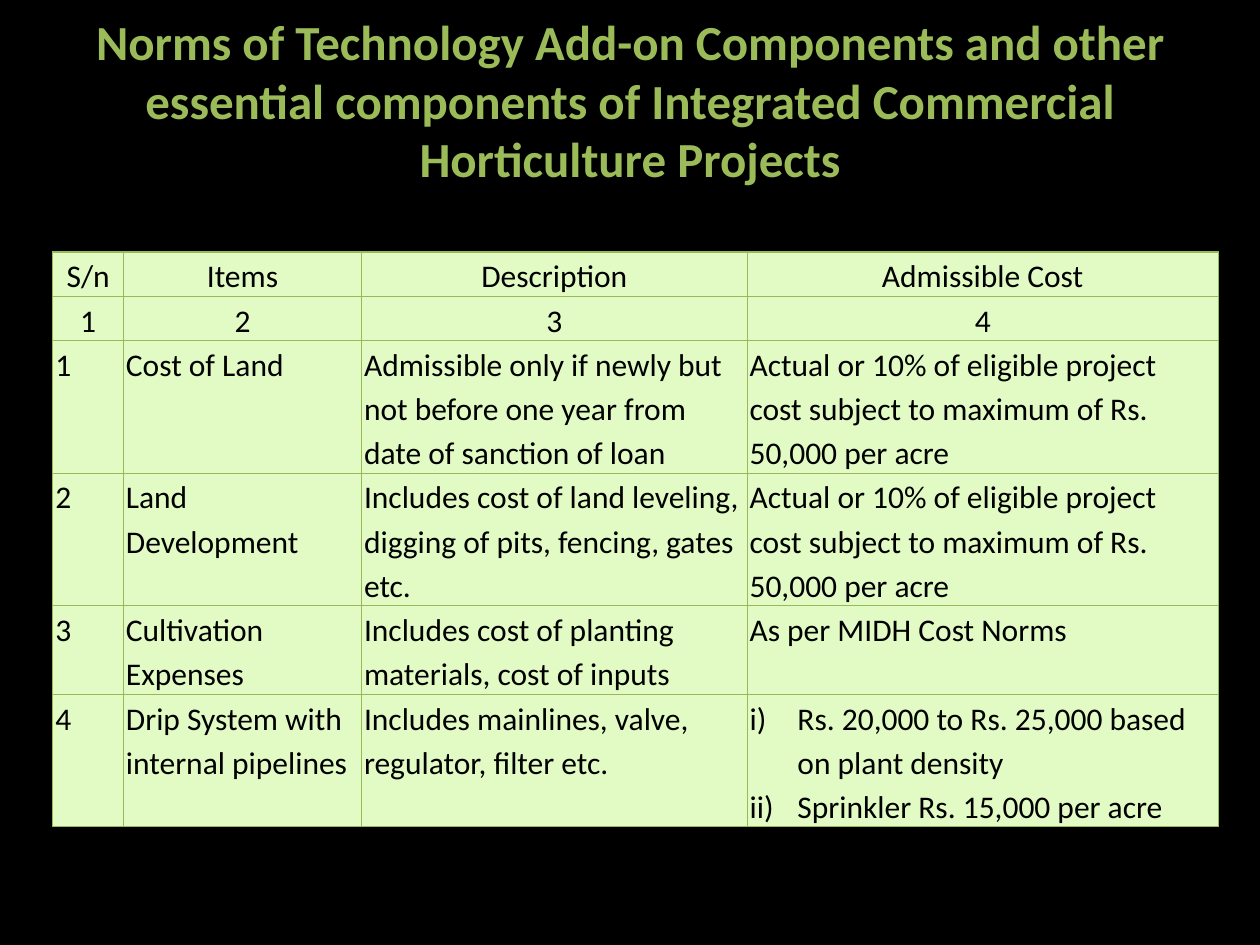
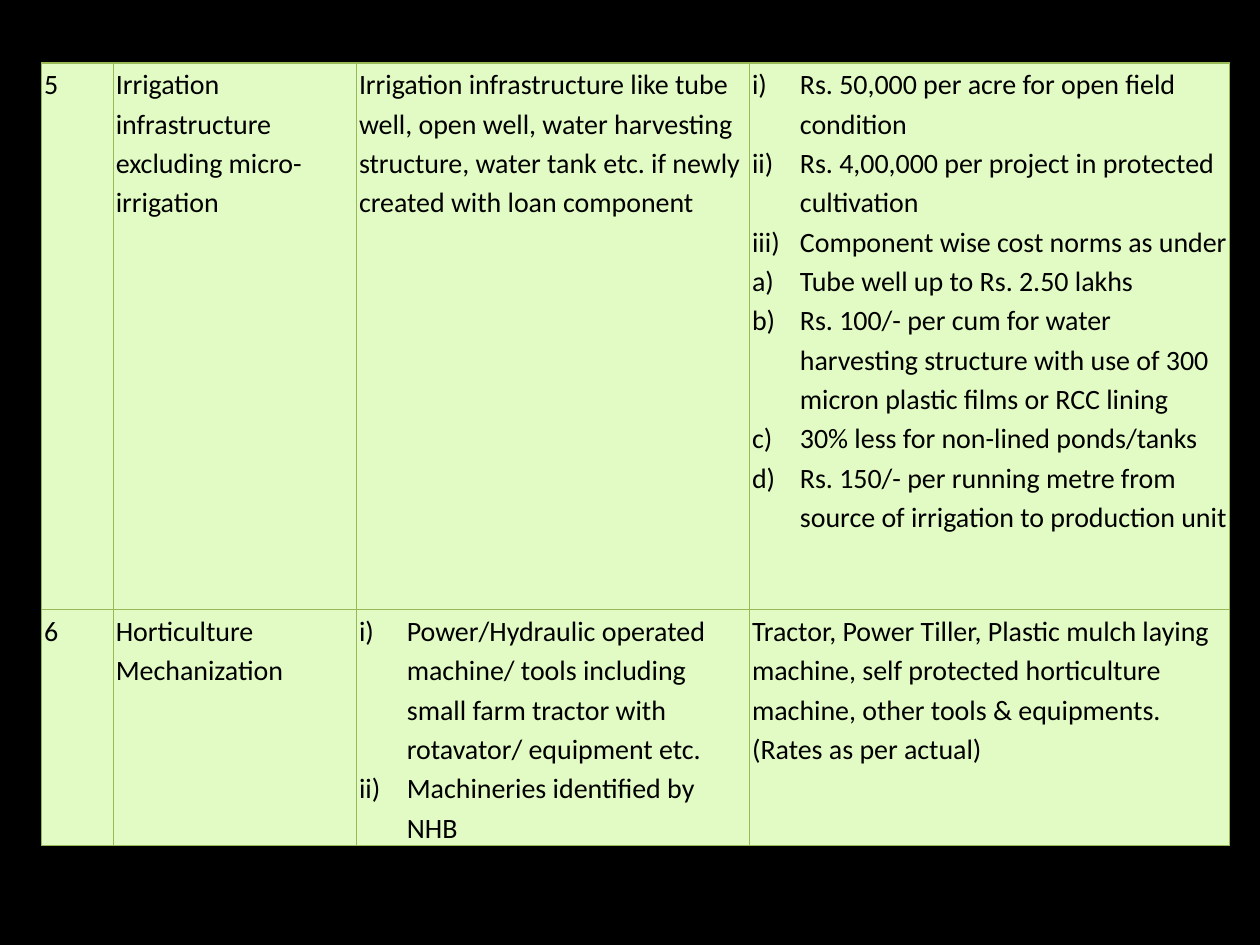
from dataclasses import dataclass

from lxml.etree import SubElement
from pptx import Presentation
from pptx.dml.color import RGBColor
from pptx.enum.text import MSO_ANCHOR, MSO_AUTO_SIZE, PP_ALIGN
from pptx.oxml.ns import qn
from pptx.util import Inches, Pt


@dataclass(frozen=True)
class Theme:
    font: str = "Calibri"
    background: str = "000000"
    title: str = "9BBB59"
    text: str = "000000"
    cell: str = "E2FBC4"
    border: str = "98B955"
    border_width: float = 0.75
    title_size: int = 28
    large_text: int = 18
    small_text: int = 16
    line_spacing: float = 1.15
    list_indent: float = 0.38


THEME = Theme()
ROMAN, LETTER = "romanLcParenR", "alphaLcParenR"
LAND_COST = "Actual or 10% of eligible project cost subject to maximum of Rs. 50,000 per acre"

TITLE = ("Norms of Technology Add-on Components and other essential components "
         "of Integrated Commercial Horticulture Projects")

# A cell is plain text, or a list of (numbering, text) entries
BASIC_NORMS = [
    ["S/n", "Items", "Description", "Admissible Cost"],
    ["1", "2", "3", "4"],
    ["1", "Cost of Land",
     "Admissible only if newly but not before one year from date of sanction of loan",
     LAND_COST],
    ["2", "Land Development",
     "Includes cost of land leveling, digging of pits, fencing, gates etc.",
     LAND_COST],
    ["3", "Cultivation Expenses",
     "Includes cost of planting materials, cost of inputs",
     "As per MIDH Cost Norms"],
    ["4", "Drip System with internal pipelines",
     "Includes mainlines, valve, regulator, filter etc.",
     [(ROMAN, "Rs. 20,000 to Rs. 25,000 based on plant density"),
      (ROMAN, "Sprinkler Rs. 15,000 per acre")]],
]

INFRASTRUCTURE_NORMS = [
    ["5", "Irrigation infrastructure excluding micro-irrigation",
     "Irrigation infrastructure like tube well, open well, water harvesting structure, "
     "water tank etc. if newly created with loan component",
     [(ROMAN, "Rs. 50,000 per acre for open field condition"),
      (ROMAN, "Rs. 4,00,000 per project in protected cultivation"),
      (ROMAN, "Component wise cost norms as under"),
      (LETTER, "Tube well up to Rs. 2.50 lakhs"),
      (LETTER, "Rs. 100/- per cum for water harvesting structure with use of "
               "300 micron plastic films or RCC lining"),
      (LETTER, "30% less for non-lined ponds/tanks"),
      (LETTER, "Rs. 150/- per running metre from source of irrigation to production unit")]],
    ["6", "Horticulture Mechanization",
     [(ROMAN, "Power/Hydraulic operated machine/ tools including small farm tractor "
              "with rotavator/ equipment etc."),
      (ROMAN, "Machineries identified by NHB")],
     "Tractor, Power Tiller, Plastic mulch laying machine, self protected horticulture "
     "machine, other tools & equipments. (Rates as per actual)"],
]


def apply_format(target, values):
    for name, value in values.items():
        setattr(target, name, value)


def format_font(font, size, color, bold=False):
    apply_format(font, {"name": THEME.font, "size": Pt(size), "bold": bold})
    font.color.rgb = RGBColor.from_string(color)


def add_title(slide, box, text):
    title = slide.shapes.title
    apply_format(title, dict(zip(("left", "top", "width", "height"), map(Inches, box))))
    apply_format(title.text_frame, {
        "text": text, "word_wrap": True, "auto_size": MSO_AUTO_SIZE.NONE,
        "vertical_anchor": MSO_ANCHOR.MIDDLE, "margin_bottom": Inches(0.32)})
    paragraph = title.text_frame.paragraphs[0]
    paragraph.alignment = PP_ALIGN.CENTER
    format_font(paragraph.runs[0].font, THEME.title_size, THEME.title, bold=True)


def number_paragraph(paragraph, numbering):
    properties = paragraph._p.get_or_add_pPr()
    indent = Inches(THEME.list_indent)
    properties.set("marL", str(indent))
    properties.set("indent", str(-indent))
    SubElement(properties, qn("a:buAutoNum"), type=numbering)


def style_cell(cell):
    # Borders come before the fill in the cell properties
    properties = cell._tc.get_or_add_tcPr()
    for side in ("lnL", "lnR", "lnT", "lnB"):
        line = SubElement(properties, qn(f"a:{side}"), w=str(Pt(THEME.border_width)))
        fill = SubElement(line, qn("a:solidFill"))
        SubElement(fill, qn("a:srgbClr"), val=THEME.border)
    cell.fill.solid()
    cell.fill.fore_color.rgb = RGBColor.from_string(THEME.cell)
    apply_format(cell, {"margin_left": Inches(0.02), "margin_right": Inches(0.02),
                        "margin_top": 0, "margin_bottom": 0})


def fill_cell(cell, content, size, alignment):
    entries = content if isinstance(content, list) else [(None, content)]
    for index, (numbering, text) in enumerate(entries):
        frame = cell.text_frame
        paragraph = frame.add_paragraph() if index else frame.paragraphs[0]
        apply_format(paragraph, {"alignment": alignment, "line_spacing": THEME.line_spacing})
        run = paragraph.add_run()
        run.text = text
        format_font(run.font, size, THEME.text)
        if numbering:
            number_paragraph(paragraph, numbering)


def add_norms_table(slide, box, rows, column_widths, row_lines, line_height, size,
                    heading_rows=0):
    """Row heights follow from the number of text lines in each row."""
    frame = slide.shapes.add_table(len(rows), len(column_widths), *map(Inches, box))
    table = frame.table
    apply_format(table, {"first_row": False, "horz_banding": False})
    for column, width in zip(table.columns, column_widths):
        column.width = Inches(width)
    for row_index, (row, lines) in enumerate(zip(rows, row_lines)):
        table.rows[row_index].height = Inches(lines * line_height)
        alignment = PP_ALIGN.CENTER if row_index < heading_rows else PP_ALIGN.LEFT
        for column_index, content in enumerate(row):
            cell = table.cell(row_index, column_index)
            style_cell(cell)
            fill_cell(cell, content, size, alignment)
            if heading_rows and row_index == 0:
                cell.vertical_anchor = MSO_ANCHOR.MIDDLE


def build_basic_norms(presentation):
    slide = presentation.slides.add_slide(presentation.slide_layouts.get_by_name("Title Only"))
    add_title(slide, (0.5, 0.3, 9, 1.25), TITLE)
    add_norms_table(slide, (0.42, 2, 9.25, 4.55), BASIC_NORMS, (0.56, 1.89, 3.06, 3.74),
                    (1, 1, 3, 3, 2, 3), 0.35, THEME.large_text, heading_rows=2)


def build_infrastructure_norms(presentation):
    slide = presentation.slides.add_slide(presentation.slide_layouts.get_by_name("Blank"))
    add_norms_table(slide, (0.33, 0.5, 9.42, 6.2), INFRASTRUCTURE_NORMS,
                    (0.57, 1.93, 3.12, 3.81), (14, 6), 0.31, THEME.small_text)


def main():
    presentation = Presentation()
    apply_format(presentation, {"slide_width": Inches(10), "slide_height": Inches(7.5)})
    # Shared black background
    background = presentation.slide_master.background.fill
    background.solid()
    background.fore_color.rgb = RGBColor.from_string(THEME.background)
    build_basic_norms(presentation)
    build_infrastructure_norms(presentation)
    presentation.save("out.pptx")


if __name__ == "__main__":
    main()
